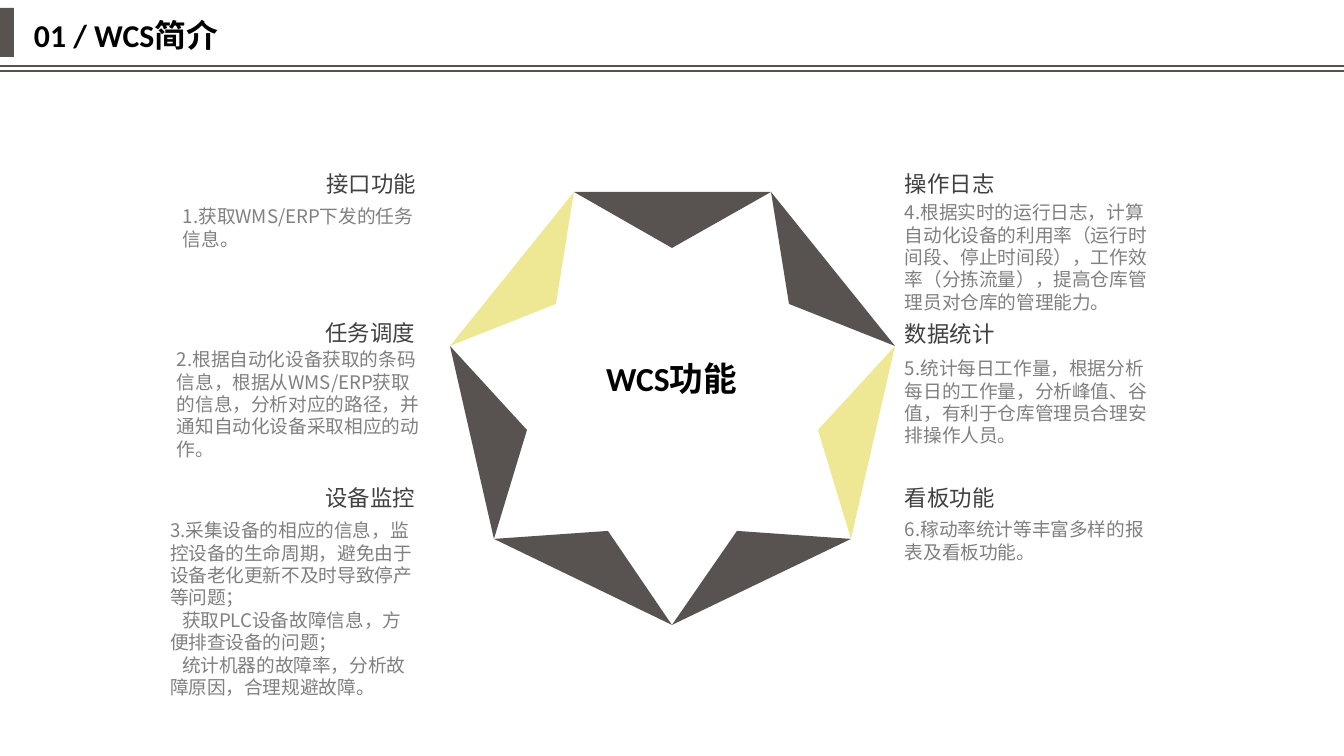
from math import cos, pi, sin

from lxml.etree import SubElement
from pptx import Presentation
from pptx.dml.color import RGBColor
from pptx.enum.shapes import MSO_CONNECTOR as CONN, MSO_SHAPE as SHAPE
from pptx.enum.text import PP_ALIGN as ALIGN
from pptx.oxml.ns import qn
from pptx.util import Pt

PX = 914400 / 134.4  # EMU per px

BROWN = RGBColor(0x58, 0x52, 0x51)
RULE = RGBColor(0x56, 0x50, 0x4F)
YELLOW = RGBColor(0xEE, 0xE8, 0x95)
BLACK = RGBColor(0, 0, 0)
DARK = RGBColor(0x40, 0x40, 0x40)
GREY = RGBColor(0x80, 0x80, 0x80)
CJK = "Noto Sans CJK SC"


def px(n):
    return round(n * PX)


class Deck:
    def __init__(self, width, height):
        self.prs = Presentation()
        self.prs.slide_width, self.prs.slide_height = px(width), px(height)
        self.s = self.prs.slides.add_slide(self.prs.slide_layouts[6])

    def paint(self, sp, color):
        sp.shadow.inherit = False
        sp.fill.solid()
        sp.fill.fore_color.rgb = color
        sp.line.fill.background()

    def rect(self, x, y, w, h, color):
        sp = self.s.shapes.add_shape(SHAPE.RECTANGLE, px(x), px(y), px(w), px(h))
        self.paint(sp, color)

    def polygon(self, points, color):
        fb = self.s.shapes.build_freeform(*points[0], scale=PX)
        fb.add_line_segments(points[1:], close=True)
        self.paint(fb.convert_to_shape(), color)

    def line(self, x1, y1, x2, y2, color):
        c = self.s.shapes.add_connector(CONN.STRAIGHT, px(x1), px(y1), px(x2), px(y2))
        c.line.color.rgb = color
        c.line.width = Pt(0.75)
        SubElement(c._element.spPr, qn("a:effectLst"))

    def text(self, x, y, w, h, lines, size, font, color, bold=False,
             align=ALIGN.LEFT, spacing=None, inset=(10, 5), indent=0):
        tf = self.s.shapes.add_textbox(px(x), px(y), px(w), px(h)).text_frame
        tf.word_wrap = True
        tf.margin_left = tf.margin_right = px(inset[0])
        tf.margin_top = tf.margin_bottom = px(inset[1])
        for i, line in enumerate(lines):
            p = tf.paragraphs[0] if i == 0 else tf.add_paragraph()
            p.text = line
            p.alignment = align
            if spacing:
                p.line_spacing = spacing
            f = p.font
            f.size, f.name, f.bold = Pt(size), font, bold
            f.color.rgb = color
            # East Asian typeface
            SubElement(f._element, qn("a:ea"), typeface=CJK)
            if i and indent:
                p._p.get_or_add_pPr().set("indent", str(px(indent)))

    def heading(self, x, y, title, align):
        self.text(x, y, 254, 40, [title], 12, "Arial", DARK, align=align, spacing=1.2)

    def body(self, x, y, w, h, lines):
        self.text(x, y, w, h, lines, 10, CJK, GREY, indent=12)


def main():
    d = Deck(1344, 756)

    # Header bar, double rule and title
    d.rect(0, 8, 14, 49, BROWN)
    for y in (66, 71):
        d.line(0, y, 1344, y, RULE)

    # Ring of seven triangles, one on each side of a heptagon
    cx, cy, outer, inner = 672.5, 397, 228, 149

    def at(radius, turn):
        a = 2 * pi * turn / 7
        return cx + radius * sin(a), cy - radius * cos(a)

    for i in range(7):
        points = [at(outer, i - 0.5), at(outer, i + 0.5), at(inner, i)]
        d.polygon(points, YELLOW if i in (2, 6) else BROWN)

    # Left column: heading x, y, title, then body x, y, height, lines
    left = [
        (172, 160, "接口功能", 173, 200, 55, ["1.获取WMS/ERP下发的任务信息。"]),
        (171, 309, "任务调度", 167, 343, 124,
         ["2.根据自动化设备获取的条码信息，根据从WMS/ERP获取的信息，"
          "分析对应的路径，并通知自动化设备采取相应的动作。"]),
        (171, 474, "设备监控", 160, 514, 191,
         ["3.采集设备的相应的信息，监控设备的生命周期，"
          "避免由于设备老化更新不及时导致停产等问题；",
          "获取PLC设备故障信息，方便排查设备的问题；",
          "统计机器的故障率，分析故障原因，合理规避故障。"]),
    ]
    for hx, hy, title, bx, by, h, lines in left:
        d.heading(hx, hy, title, ALIGN.RIGHT)
        d.body(bx, by, 266, h, lines)

    # Right column: heading y, title, then body y, height, text
    right = [
        (160, "操作日志", 196, 124,
         "4.根据实时的运行日志，计算自动化设备的利用率（运行时间段、停止时间段），"
         "工作效率（分拣流量），提高仓库管理员对仓库的管理能力。"),
        (310, "数据统计", 352, 121,
         "5.统计每日工作量，根据分析每日的工作量，分析峰值、谷值，"
         "有利于仓库管理员合理安排操作人员。"),
        (474, "看板功能", 513, 55, "6.稼动率统计等丰富多样的报表及看板功能。"),
    ]
    for hy, title, by, h, line in right:
        d.heading(895, hy, title, ALIGN.LEFT)
        d.body(895, by, 270, h, [line])

    # Centre label and slide title
    d.text(593, 351, 159, 54, ["WCS功能"], 18, "Calibri", BLACK, bold=True, inset=(13, 7))
    d.text(24, 11, 438, 48, ["01 / WCS简介"], 17, "Calibri", BLACK, bold=True)

    d.prs.save("out.pptx")


if __name__ == "__main__":
    main()
